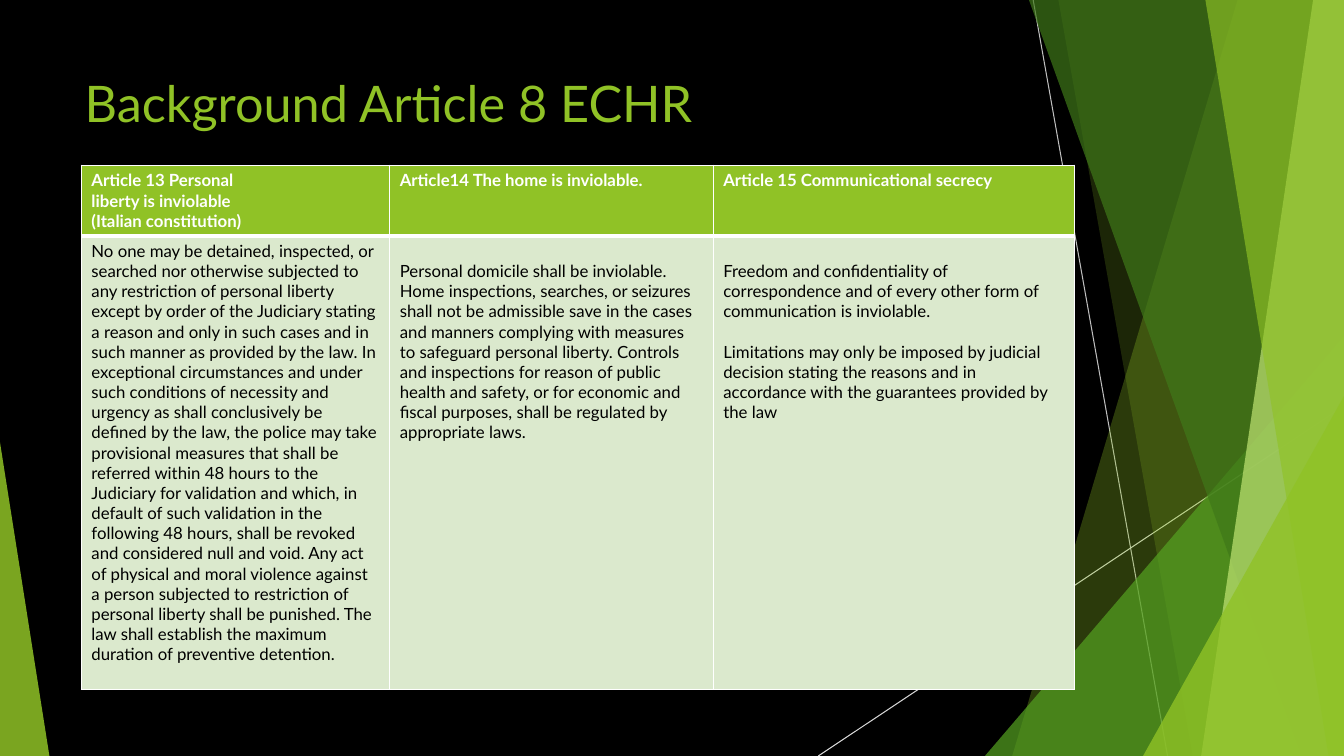
from dataclasses import dataclass

from lxml import etree
from pptx import Presentation
from pptx.dml.color import RGBColor
from pptx.enum.shapes import MSO_CONNECTOR, MSO_SHAPE
from pptx.enum.text import MSO_ANCHOR, MSO_AUTO_SIZE, PP_ALIGN
from pptx.oxml import parse_xml
from pptx.oxml.ns import nsdecls, qn
from pptx.util import Pt

STRAIGHT = MSO_CONNECTOR.STRAIGHT
TRIANGLE = MSO_SHAPE.ISOSCELES_TRIANGLE
TOP = MSO_ANCHOR.TOP
LEFT = PP_ALIGN.LEFT
NO_AUTOFIT = MSO_AUTO_SIZE.NONE


@dataclass(frozen=True)
class Theme:
    font: str = "Lato"
    title_size: int = 36
    body_size: int = 12
    black: str = "000000"
    white: str = "FFFFFF"
    lime: str = "90C226"
    green: str = "54A021"
    forest: str = "3F7819"
    pale_lime: str = "C0E474"
    pale_green: str = "DBE9CD"
    grey: str = "BFBFBF"
    light_grey: str = "D9D9D9"


T = Theme()
W, H = 960, 540


def paint(sp, color, opacity):
    sp.shadow.inherit = False
    sp.fill.solid()
    sp.fill.fore_color.rgb = RGBColor.from_string(color)
    srgb = sp.fill._xPr.find(qn("a:solidFill")).find(qn("a:srgbClr"))
    etree.SubElement(srgb, qn("a:alpha")).set("val", str(opacity * 1000))
    sp.line.fill.background()


def set_font(p, size, color, bold=False):
    p.font.name = T.font
    p.font.size = Pt(size)
    p.font.bold = bold
    p.font.color.rgb = RGBColor.from_string(color)


prs = Presentation()
prs.slide_width, prs.slide_height = Pt(W), Pt(H)
s = prs.slides.add_slide(prs.slide_layouts[5])
s.background.fill.solid()
s.background.fill.fore_color.rgb = RGBColor.from_string(T.black)

for x1, y1, x2, y2, color in [
    (738, 0, 834, H, T.grey),
    (W, 290, 584.5, H, T.light_grey),
]:
    ln = s.shapes.add_connector(STRAIGHT, Pt(x1), Pt(y1), Pt(x2), Pt(y2))
    ln.line.width = Pt(0.75)
    ln.line.color.rgb = RGBColor.from_string(color)
    etree.SubElement(ln._element.spPr, qn("a:effectLst"))

# panel: top x, bottom x; corner: left, top
facets = [
    ("panel", 884, 723, T.lime, 30),
    ("panel", 756, 852, T.lime, 20),
    ("corner", 703.5, 240, T.green, 72),
    ("panel", 735, 929.5, T.forest, 70),
    ("panel", 938, 858, T.pale_lime, 70),
    ("panel", 861, 949, T.lime, 65),
    ("corner", 816.5, 283, T.lime, 80),
]
for kind, a, b, color, opacity in facets:
    if kind == "panel":
        fb = s.shapes.build_freeform(Pt(a), 0)
        fb.add_line_segments([(Pt(W), 0), (Pt(W), Pt(H)), (Pt(b), Pt(H))])
        sp = fb.convert_to_shape()
    else:
        sp = s.shapes.add_shape(TRIANGLE, Pt(a), Pt(b), Pt(W - a), Pt(H - b))
        sp.adjustments[0] = 1
    paint(sp, color, opacity)

left_edge = s.shapes.add_shape(TRIANGLE, 0, Pt(316), Pt(35.3), Pt(224))
left_edge.adjustments[0] = 0
paint(left_edge, T.lime, 85)

title = s.shapes.title
title.left, title.top, title.width, title.height = Pt(53.3), Pt(48), Pt(677), Pt(104)
tf = title.text_frame
tf.text = "Background Article 8 ECHR"
tf.auto_size = NO_AUTOFIT
tf.vertical_anchor = TOP
tf.paragraphs[0].alignment = LEFT
set_font(tf.paragraphs[0], T.title_size, T.lime)

articles = [
    (220.3,
     ["Article 13 Personal", "liberty is inviolable \v(Italian constitution)"],
     ["No one may be detained, inspected, or searched nor otherwise subjected to any "
      "restriction of personal liberty except by order of the Judiciary stating a reason "
      "and only in such cases and in such manner as provided by the law. In exceptional "
      "circumstances and under such conditions of necessity and urgency as shall "
      "conclusively be defined by the law, the police may take provisional measures that "
      "shall be referred within 48 hours to the Judiciary for validation and which, in "
      "default of such validation in the following 48 hours, shall be revoked and "
      "considered null and void. Any act of physical and moral violence against a person "
      "subjected to restriction of personal liberty shall be punished. The law shall "
      "establish the maximum duration of preventive detention."]),
    (231.1,
     ["Article14 The home is inviolable."],
     ["Personal domicile shall be inviolable. Home inspections, searches, or seizures "
      "shall not be admissible save in the cases and manners complying with measures to "
      "safeguard personal liberty. Controls and inspections for reason of public health "
      "and safety, or for economic and fiscal purposes, shall be regulated by "
      "appropriate laws."]),
    (257.8,
     ["Article 15 Communicational secrecy"],
     ["Freedom and confidentiality of correspondence and of every other form of "
      "communication is inviolable.",
      "Limitations may only be imposed by judicial decision stating the reasons and in "
      "accordance with the guarantees provided by the law"]),
]
row_heights = [50.4, 324]
row_styles = [
    (T.lime, T.white, True, {"lnL": 1, "lnR": 1, "lnT": 1, "lnB": 3}),
    (T.pale_green, T.black, False, {"lnL": 1, "lnR": 1, "lnT": 3, "lnB": 1}),
]
table_width = sum(width for width, _, _ in articles)
table = s.shapes.add_table(2, 3, Pt(58.1), Pt(118), Pt(table_width), Pt(sum(row_heights))).table
for row, height in zip(table.rows, row_heights):
    row.height = Pt(height)

for c, (width, *texts) in enumerate(articles):
    table.columns[c].width = Pt(width)
    for r, (fill, color, bold, borders) in enumerate(row_styles):
        cell = table.cell(r, c)
        tcPr = cell._tc.get_or_add_tcPr()
        for side, weight in borders.items():
            tcPr.append(parse_xml(
                f'<a:{side} {nsdecls("a")} w="{Pt(weight)}"><a:solidFill>'
                f'<a:srgbClr val="{T.white}"/></a:solidFill></a:{side}>'))
        cell.fill.solid()
        cell.fill.fore_color.rgb = RGBColor.from_string(fill)
        cell.margin_top = Pt(18 if r and c else 3.6)
        tf = cell.text_frame
        for i, text in enumerate(texts[r]):
            p = tf.add_paragraph() if i else tf.paragraphs[0]
            p.text = text
            p.space_before = Pt(14.4 if r and i else 0)
            set_font(p, T.body_size, color, bold)

prs.save("out.pptx")
